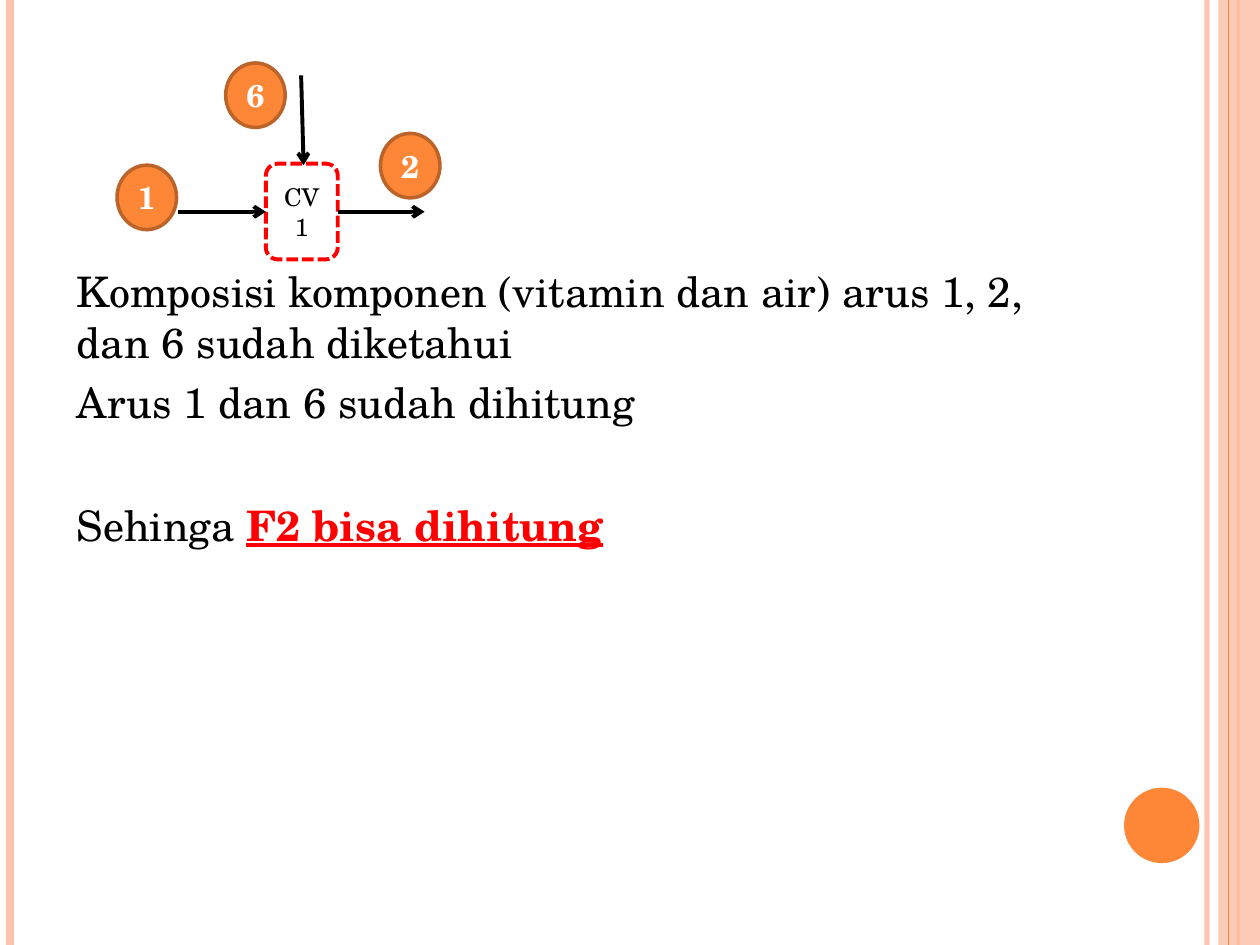
from lxml import etree
from pptx import Presentation
from pptx.dml.color import RGBColor
from pptx.enum.dml import MSO_LINE
from pptx.enum.shapes import MSO_CONNECTOR, MSO_SHAPE
from pptx.enum.text import MSO_ANCHOR, PP_ALIGN
from pptx.oxml.ns import qn
from pptx.util import Cm, Pt

LINE = MSO_CONNECTOR.STRAIGHT
RECT, ROUND, OVAL = MSO_SHAPE.RECTANGLE, MSO_SHAPE.ROUNDED_RECTANGLE, MSO_SHAPE.OVAL
DASH = MSO_LINE.SQUARE_DOT
MIDDLE, CENTER = MSO_ANCHOR.MIDDLE, PP_ALIGN.CENTER

FONT = "TeX Gyre Schola"
BLACK = RGBColor(0, 0, 0)
WHITE = RGBColor(255, 255, 255)
RED = RGBColor(255, 0, 0)
ORANGE = RGBColor(0xFE, 0x86, 0x37)
BROWN = RGBColor(0xBC, 0x63, 0x29)
PEACH = RGBColor(0xFE, 0xC3, 0xAE)

# Content; all lengths in cm
WIDTH, HEIGHT = 25.4, 19.05
STRIPES = [  # x, colour, points, opacity in percent
    (24.33, PEACH, 3, 93),
    (0.2, PEACH, 4.5, 100),
    (24.97, ORANGE, 1.5, 100),
]
EDGE = (24.77, ORANGE, 0.75, 100)
BAND = (24.56, 0, 0.84, HEIGHT)
DOT = (22.66, 15.88, 1.52, 1.52)
BODY = (1.3, 5.23, 20.75, 13.54)
NOTES = [  # space before in points, plain text, stressed text
    (6, "Komposisi komponen (vitamin dan air) arus 1, 2, dan 6 sudah diketahui", ""),
    (6, "Arus 1 dan 6 sudah dihitung", ""),
    (41, "Sehinga ", "F2 bisa dihitung"),
]
BOX = (5.36, 3.3, 1.45, 1.93)
FLOWS = [  # x and y of start, x and y of end
    (3.58, 4.27, 5.36, 4.27),
    (6.81, 4.27, 8.56, 4.27),
    (6.07, 1.52, 6.12, 3.33),
]
TAG_SIZE = (1.2, 1.3)
TAGS = [("1", 2.36, 3.33), ("6", 4.55, 1.27), ("2", 7.67, 2.69)]

deck = Presentation()
deck.slide_width, deck.slide_height = Cm(WIDTH), Cm(HEIGHT)
slide = deck.slides.add_slide(deck.slide_layouts[6])
shapes = slide.shapes


def fade(part, share):
    color = next(part.element.spPr.iter(qn("a:srgbClr")))
    etree.SubElement(color, qn("a:alpha"), val=str(share * 1000))


def add_line(ends, color, points):
    line = shapes.add_connector(LINE, *map(Cm, ends))
    line.line.color.rgb = color
    line.line.width = Pt(points)
    etree.SubElement(line.element.spPr, qn("a:effectLst"))
    return line


def add_stripe(x, color, points, share):
    line = add_line((x, 0, x, HEIGHT), color, points)
    if share < 100:
        fade(line, share)


def add_part(kind, place, fill=None, edge=None, points=0):
    part = shapes.add_shape(kind, *map(Cm, place))
    part.shadow.inherit = False
    if fill is None:
        part.fill.background()
    else:
        part.fill.solid()
        part.fill.fore_color.rgb = fill
    if edge is None:
        part.line.fill.background()
    else:
        part.line.color.rgb = edge
        part.line.width = Pt(points)
    return part


def set_font(font, size, color, bold=False):
    font.name, font.size, font.bold = FONT, Pt(size), bold
    font.color.rgb = color


def add_label(part, text, size, color, bold=False):
    part.text_frame.vertical_anchor = MIDDLE
    para = part.text_frame.paragraphs[0]
    para.text, para.alignment = text, CENTER
    set_font(para.font, size, color, bold)


# Side decoration
for stripe in STRIPES:
    add_stripe(*stripe)
fade(add_part(RECT, BAND, PEACH), 87)
add_stripe(*EDGE)
add_part(OVAL, DOT, ORANGE)

# Body text
frame = shapes.add_textbox(*map(Cm, BODY)).text_frame
frame.word_wrap = True
for i, (gap, plain, stress) in enumerate(NOTES):
    para = frame.add_paragraph() if i else frame.paragraphs[0]
    para.space_before = Pt(gap)
    set_font(para.font, 24, BLACK)
    set_font(para.add_run().font, 24, BLACK)
    para.runs[0].text = plain
    if stress:
        run = para.add_run()
        run.text = stress
        set_font(run.font, 24, RED, True)
        run.font.underline = True

# Control volume
box = add_part(ROUND, BOX, edge=RED, points=2.25)
box.line.dash_style = DASH
add_label(box, "CV 1", 14, BLACK)

# Flow arrows
for ends in FLOWS:
    flow = add_line(ends, BLACK, 2.25)
    etree.SubElement(flow.line._get_or_add_ln(), qn("a:tailEnd"), type="arrow")

# Flow numbers
for text, x, y in TAGS:
    tag = add_part(OVAL, (x, y, *TAG_SIZE), ORANGE, BROWN, 2)
    tag.text_frame.margin_left = tag.text_frame.margin_right = 0
    add_label(tag, text, 18, WHITE, True)

deck.save("out.pptx")
